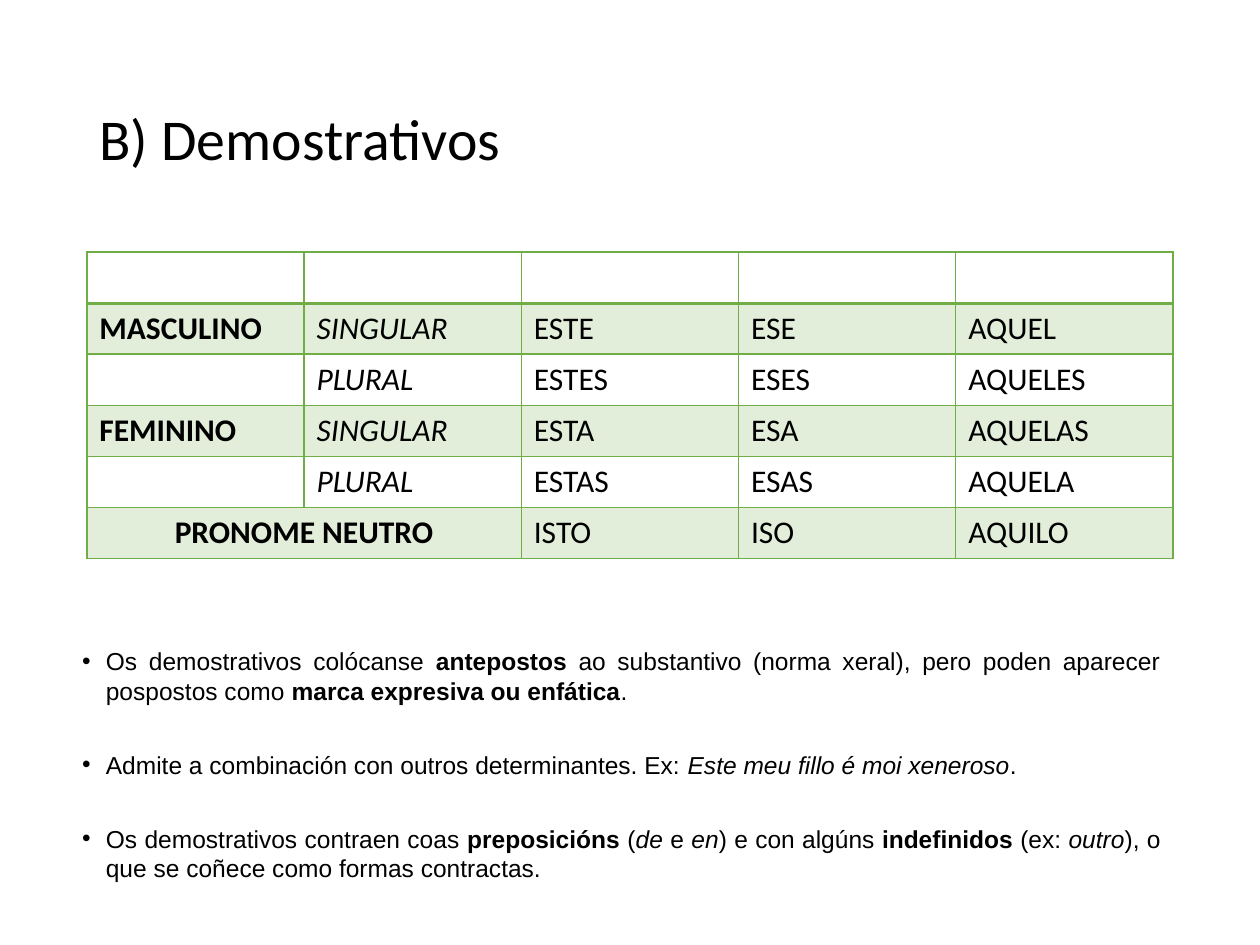
"""Build a slide on Galician demonstratives with a table and a list of usage notes."""
from lxml import etree
from pptx import Presentation
from pptx import util as u
from pptx.dml.color import RGBColor
from pptx.enum import text
from pptx.oxml import ns

BLACK = RGBColor(0x00, 0x00, 0x00)
GREEN = RGBColor(0x70, 0xAD, 0x47)
TINT = 20000
THIN, THICK = u.Pt(0.96), u.Pt(1.98)

TITLE = "B) Demostrativos"
ROWS = [
    ("", "", "", "", ""),
    ("MASCULINO", "SINGULAR", "ESTE", "ESE", "AQUEL"),
    ("", "PLURAL", "ESTES", "ESES", "AQUELES"),
    ("FEMININO", "SINGULAR", "ESTA", "ESA", "AQUELAS"),
    ("", "PLURAL", "ESTAS", "ESAS", "AQUELA"),
    ("PRONOME NEUTRO", "", "ISTO", "ISO", "AQUILO"),
]
NOTES = [
    [("Os demostrativos colócanse ", ""), ("antepostos", "b"),
     (" ao substantivo (norma xeral), pero poden aparecer pospostos como ", ""),
     ("marca expresiva ou enfática", "b"), (".", "")],
    [("Admite a combinación con outros determinantes. Ex: ", ""),
     ("Este meu fillo é moi xeneroso", "i"), (".", "")],
    [("Os demostrativos contraen coas ", ""), ("preposicións", "b"), (" (", ""),
     ("de", "i"), (" e ", ""), ("en", "i"), (") e con algúns ", ""),
     ("indefinidos", "b"), (" (ex: ", ""), ("outro", "i"),
     ("), o que se coñece como formas contractas.", "")],
]


def sub(parent, tag, **attrs):
    return etree.SubElement(parent, ns.qn(tag), {k: str(v) for k, v in attrs.items()})


def set_font(p, name, size):
    p.font.name, p.font.size = name, u.Pt(size)
    p.font.color.rgb = BLACK


def place(sp, left, top, width, height):
    sp.left, sp.top, sp.width, sp.height = map(u.Cm, (left, top, width, height))


def style_cell(cell, row):
    tcPr = cell._tc.get_or_add_tcPr()
    widths = {"L": THIN, "R": THIN,
              "T": THICK if row == 1 else THIN, "B": THICK if row == 0 else THIN}
    for side, width in widths.items():
        fill = sub(sub(tcPr, f"a:ln{side}", w=width), "a:solidFill")
        sub(fill, "a:srgbClr", val=GREEN)
    if row % 2:
        cell.fill.solid()
        cell.fill.fore_color.rgb = GREEN
        sub(tcPr.find(ns.qn("a:solidFill"))[0], "a:alpha", val=TINT)
    else:
        cell.fill.background()


def add_title(s):
    sp = s.shapes.title
    place(sp, 1.75, 1.02, 21.9, 3.68)
    tf = sp.text_frame
    tf.text = TITLE
    tf.vertical_anchor = text.MSO_ANCHOR.MIDDLE
    p = tf.paragraphs[0]
    p.alignment, p.line_spacing = text.PP_ALIGN.LEFT, 0.9
    set_font(p, "Calibri", 33)


def add_forms(s):
    table = s.shapes.add_table(len(ROWS), len(ROWS[0]), u.Cm(1.75), u.Cm(5.08),
                               u.Cm(21.9), u.Cm(6.18)).table
    table.first_row = table.horz_banding = False
    for i, row in enumerate(ROWS):
        for j, word in enumerate(row):
            cell = table.cell(i, j)
            cell.text = word
            style_cell(cell, i)
            p = cell.text_frame.paragraphs[0]
            set_font(p, "Calibri", 18)
            p.font.bold, p.font.italic = j == 0, j == 1
    neuter = table.cell(len(ROWS) - 1, 0)
    neuter.merge(table.cell(len(ROWS) - 1, 1))
    neuter.text_frame.paragraphs[0].alignment = text.PP_ALIGN.CENTER


def add_notes(s):
    sp = s.placeholders[1]
    place(sp, 1.4, 12.9, 22.25, 4.98)
    tf = sp.text_frame
    tf.auto_size = text.MSO_AUTO_SIZE.NONE
    for i, note in enumerate(NOTES):
        p = tf.add_paragraph() if i else tf.paragraphs[0]
        pPr = p._p.get_or_add_pPr()
        pPr.set("marL", str(u.Cm(0.48)))
        pPr.set("indent", str(-u.Cm(0.48)))
        sub(sub(pPr, "a:buClr"), "a:srgbClr", val=BLACK)
        sub(pPr, "a:buFont", typeface="Arial")
        sub(pPr, "a:buChar", char="•")
        p.alignment = text.PP_ALIGN.JUSTIFY
        p.space_before = u.Pt(25.5 if i else 0)
        set_font(p, "Arial", 14)
        for words, style in note:
            r = p.add_run()
            r.text = words
            if style == "b":
                r.font.bold = True
            elif style == "i":
                r.font.italic = True


def main():
    prs = Presentation()
    prs.slide_width, prs.slide_height = u.Cm(25.4), u.Cm(19.05)
    s = prs.slides.add_slide(prs.slide_layouts[1])
    add_title(s)
    add_forms(s)
    add_notes(s)
    prs.save("out.pptx")


if __name__ == "__main__":
    main()
